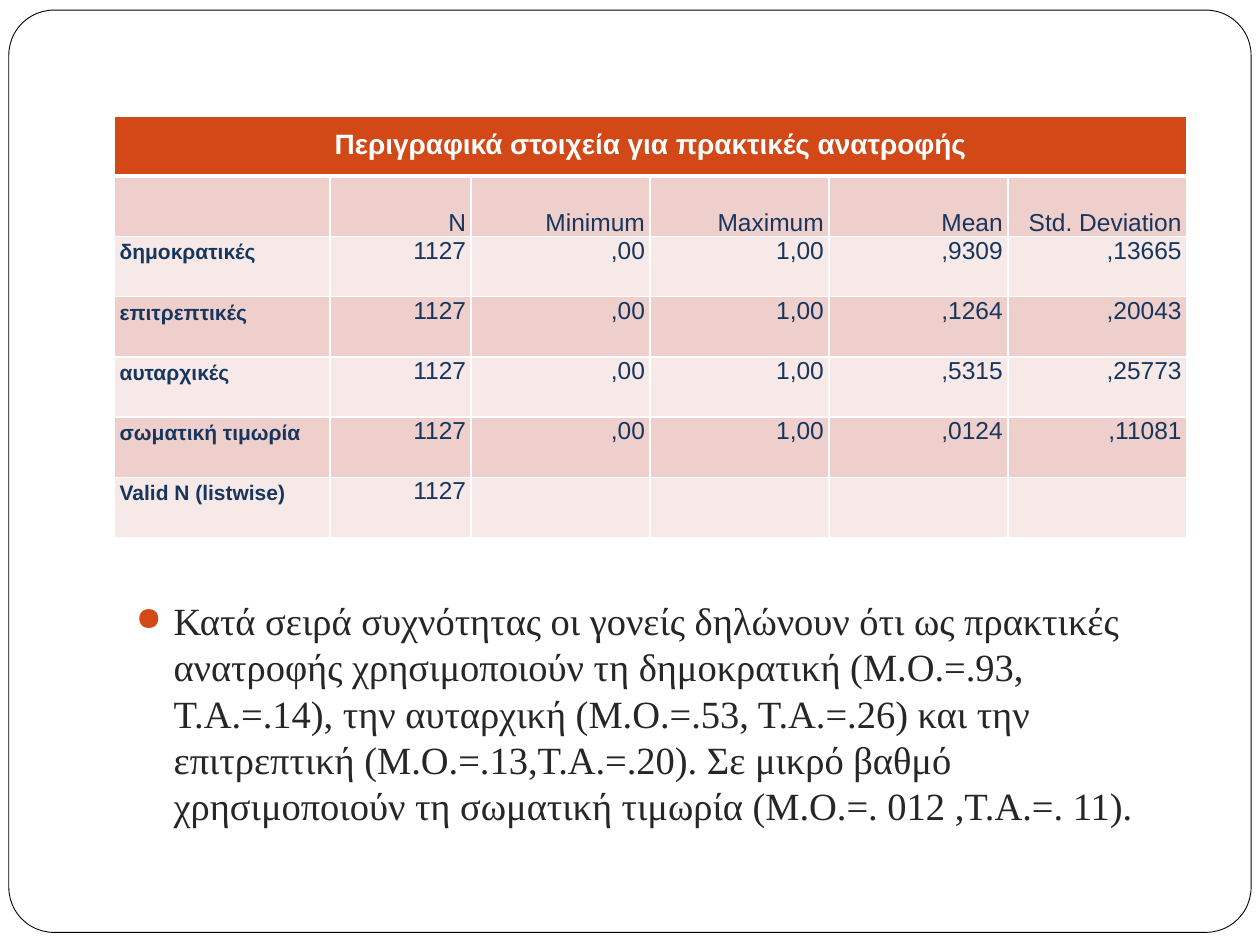
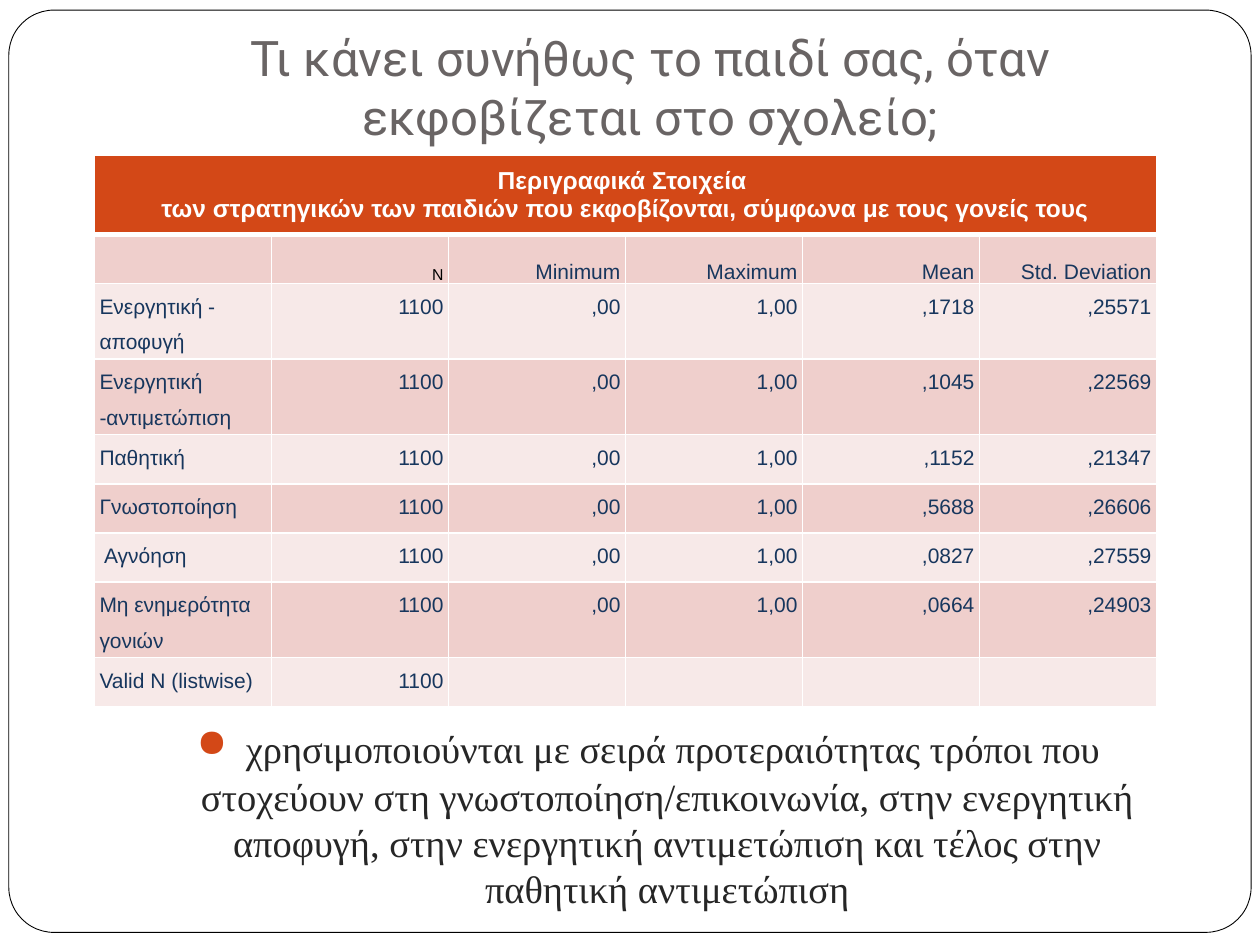
import lxml.etree
import pptx
import pptx.dml.color
import pptx.enum.shapes
import pptx.enum.text
import pptx.oxml
import pptx.oxml.ns
import pptx.util

COLORS = {
    "paper": "FFFFFF", "frame": "000000", "accent": "D34817", "title": "696464",
    "body": "262626", "figures": "17365D", "dark_band": "EFCFCC", "light_band": "F7E9E8",
}
TABLE_FONT, TITLE_FONT, BODY_FONT = "Arial", "Roboto", "Times New Roman"
COLUMNS, ROWS = 100, 75  # page grid
GRID_UNIT = pptx.util.Inches(0.1)
CELL_INSET = pptx.util.Inches(0.04)
BULLET_INDENT = pptx.util.Inches(0.3)
ALIGN = pptx.enum.text.PP_ALIGN
ANCHOR = pptx.enum.text.MSO_ANCHOR

MEASURES = ["N", "Minimum", "Maximum", "Mean", "Std. Deviation"]
PRACTICES = [
    ("δημοκρατικές", ",9309", ",13665"),
    ("επιτρεπτικές", ",1264", ",20043"),
    ("αυταρχικές", ",5315", ",25773"),
    ("σωματική τιμωρία", ",0124", ",11081"),
]
STRATEGIES = [
    ("Ενεργητική - αποφυγή", ",1718", ",25571"),
    ("Ενεργητική -αντιμετώπιση", ",1045", ",22569"),
    ("Παθητική", ",1152", ",21347"),
    ("Γνωστοποίηση", ",5688", ",26606"),
    (" Αγνόηση", ",0827", ",27559"),
    ("Μη ενημερότητα γονιών", ",0664", ",24903"),
]


def grid(*counts):
    return [round(count * GRID_UNIT) for count in counts]


def rgb(name):
    return pptx.dml.color.RGBColor.from_string(COLORS[name])


def style(para, font, size, color, bold=False, align=ALIGN.LEFT):
    para.alignment = align
    for span in para.runs:
        span.font.name = font
        span.font.size = pptx.util.Pt(size)
        span.font.bold = bold
        span.font.color.rgb = rgb(color)


def add_page(deck):
    """Blank page with the rounded frame that every page carries."""
    page = deck.slides.add_slide(deck.slide_layouts[6])
    frame = page.shapes.add_shape(
        pptx.enum.shapes.MSO_SHAPE.ROUNDED_RECTANGLE, *grid(0.7, 0.8, 98.6, 73.2))
    frame.adjustments[0] = 0.049
    frame.shadow.inherit = False
    frame.fill.solid()
    frame.fill.fore_color.rgb = rgb("paper")
    frame.line.color.rgb = rgb("frame")
    frame.line.width = pptx.util.Pt(0.5)
    return page


def add_text_box(page, place, anchor=ANCHOR.TOP):
    box = page.shapes.add_textbox(*grid(*place))
    box.text_frame.word_wrap = True
    box.text_frame.vertical_anchor = anchor
    return box.text_frame


def add_title(page, text):
    text_frame = add_text_box(page, (9.1, 0, 85, 12.5), ANCHOR.BOTTOM)
    text_frame.margin_bottom = pptx.util.Inches(0.1)
    text_frame.text = text
    style(text_frame.paragraphs[0], TITLE_FONT, 28, "title", align=ALIGN.CENTER)


def add_bullet(page, place, text, align=ALIGN.LEFT, lead_size=None):
    """Bulleted paragraph; lead_size opens it with a larger space."""
    para = add_text_box(page, place).paragraphs[0]
    if lead_size:
        para.add_run().text = " "
    para.add_run().text = text
    style(para, BODY_FONT, 22, "body", align=align)
    if lead_size:
        para.runs[0].font.size = pptx.util.Pt(lead_size)
    para.space_before = pptx.util.Pt(5.8)
    properties = para._p.get_or_add_pPr()
    properties.set("marL", str(BULLET_INDENT))
    properties.set("indent", str(-BULLET_INDENT))
    color = lxml.etree.SubElement(properties, pptx.oxml.ns.qn("a:buClr"))
    lxml.etree.SubElement(color, pptx.oxml.ns.qn("a:srgbClr"), val=COLORS["accent"])
    lxml.etree.SubElement(properties, pptx.oxml.ns.qn("a:buSzPct"), val="85000")
    lxml.etree.SubElement(properties, pptx.oxml.ns.qn("a:buChar"), char="●")


def set_borders(cell, top=1, bottom=1):
    properties = cell._tc.get_or_add_tcPr()
    for position, (side, points) in enumerate(
            [("L", 1), ("R", 1), ("T", top), ("B", bottom)]):
        properties.insert(position, pptx.oxml.parse_xml(
            f'<a:ln{side} {pptx.oxml.ns.nsdecls("a")} w="{pptx.util.Pt(points)}">'
            f'<a:solidFill><a:srgbClr val="{COLORS["paper"]}"/></a:solidFill></a:ln{side}>'))


def fill_cell(cell, text, fill, anchor=ANCHOR.TOP, spacing=None, **text_style):
    cell.margin_left = cell.margin_right = CELL_INSET
    cell.margin_top = cell.margin_bottom = 0
    cell.vertical_anchor = anchor
    cell.fill.solid()
    cell.fill.fore_color.rgb = rgb(fill)
    if text:
        cell.text_frame.text = text
        for para in cell.text_frame.paragraphs:
            para.line_spacing = spacing
            style(para, TABLE_FONT, **text_style)


def add_statistics(page, corner, widths, heights, heading, heading_size, cases, records,
                   size, label_style, spacing):
    """Heading across the table, a row of measures, then one row per record."""
    body = [(label, cases, ",00", "1,00", mean, deviation)
            for label, mean, deviation in records]
    body.append(("Valid N (listwise)", cases, "", "", "", ""))
    rows = [("", *MEASURES), *body]
    shape = page.shapes.add_table(
        len(heights), len(widths), *grid(*corner, sum(widths), sum(heights)))
    table = shape.table
    table.first_row = table.horz_banding = False
    for column, width in zip(table.columns, grid(*widths)):
        column.width = width
    for row, height in zip(table.rows, grid(*heights)):
        row.height = height

    # Heading
    exact = pptx.util.Pt(16)
    for column in range(len(widths)):
        set_borders(table.cell(0, column), bottom=3)
    table.cell(0, 0).merge(table.cell(0, len(widths) - 1))
    fill_cell(table.cell(0, 0), heading, "accent", ANCHOR.MIDDLE, exact,
              size=heading_size, color="paper", bold=True, align=ALIGN.CENTER)

    # Measures and records
    figure_style = {"size": size, "color": "figures", "align": ALIGN.RIGHT}
    for index, values in enumerate(rows, start=1):
        is_measures = index == 1
        for column, value in enumerate(values):
            cell = table.cell(index, column)
            fill_cell(cell, value, "dark_band" if index % 2 else "light_band",
                      ANCHOR.BOTTOM if is_measures else ANCHOR.TOP,
                      exact if is_measures else spacing,
                      **(figure_style if column else label_style))
            set_borders(cell, top=3 if is_measures else 1)
    return table


def build_practices(deck):
    page = add_page(deck)
    add_statistics(
        page, (9.1, 9.2), [17.1, 11.2] + [14.2] * 4, [4.78] * 7,
        "Περιγραφικά στοιχεία για πρακτικές ανατροφής", 16, "1127", PRACTICES,
        size=14, label_style={"size": 12, "color": "figures", "bold": True},
        spacing=pptx.util.Pt(16))
    add_bullet(
        page, (9.8, 46.9, 85, 20.5),
        "Κατά σειρά συχνότητας οι γονείς δηλώνουν ότι ως πρακτικές ανατροφής "
        "χρησιμοποιούν τη δημοκρατική (Μ.Ο.=.93, Τ.Α.=.14), την αυταρχική "
        "(Μ.Ο.=.53, Τ.Α.=.26) και την επιτρεπτική (Μ.Ο.=.13,Τ.Α.=.20). Σε μικρό βαθμό "
        "χρησιμοποιούν τη σωματική τιμωρία (Μ.Ο.=. 012 ,Τ.Α.=. 11).")


def build_strategies(deck):
    page = add_page(deck)
    add_title(page, "Τι κάνει συνήθως το παιδί σας, όταν εκφοβίζεται στο σχολείο;")
    single, double = 3.9, 5.95
    table = add_statistics(
        page, (7.5, 12.3), [14.05] * 6,
        [6.3, single, double, double, single, single, single, double, single],
        "Περιγραφικά Στοιχεία \n"
        "των στρατηγικών των παιδιών που εκφοβίζονται, σύμφωνα με τους γονείς τους",
        14, "1100", STRATEGIES,
        size=12, label_style={"size": 12, "color": "figures"}, spacing=1.5)
    style(table.cell(1, 1).text_frame.paragraphs[0], TABLE_FONT, 9, "frame",
          align=ALIGN.RIGHT)
    add_bullet(
        page, (9.8, 56.5, 83.3, 18.5),
        "χρησιμοποιούνται με σειρά προτεραιότητας τρόποι που στοχεύουν στη "
        "γνωστοποίηση/επικοινωνία, στην ενεργητική αποφυγή, στην ενεργητική "
        "αντιμετώπιση και τέλος στην παθητική αντιμετώπιση",
        align=ALIGN.CENTER, lead_size=26)


def main():
    deck = pptx.Presentation()
    deck.slide_width, deck.slide_height = grid(COLUMNS, ROWS)
    build_practices(deck)
    build_strategies(deck)
    deck.save("out.pptx")


if __name__ == "__main__":
    main()
